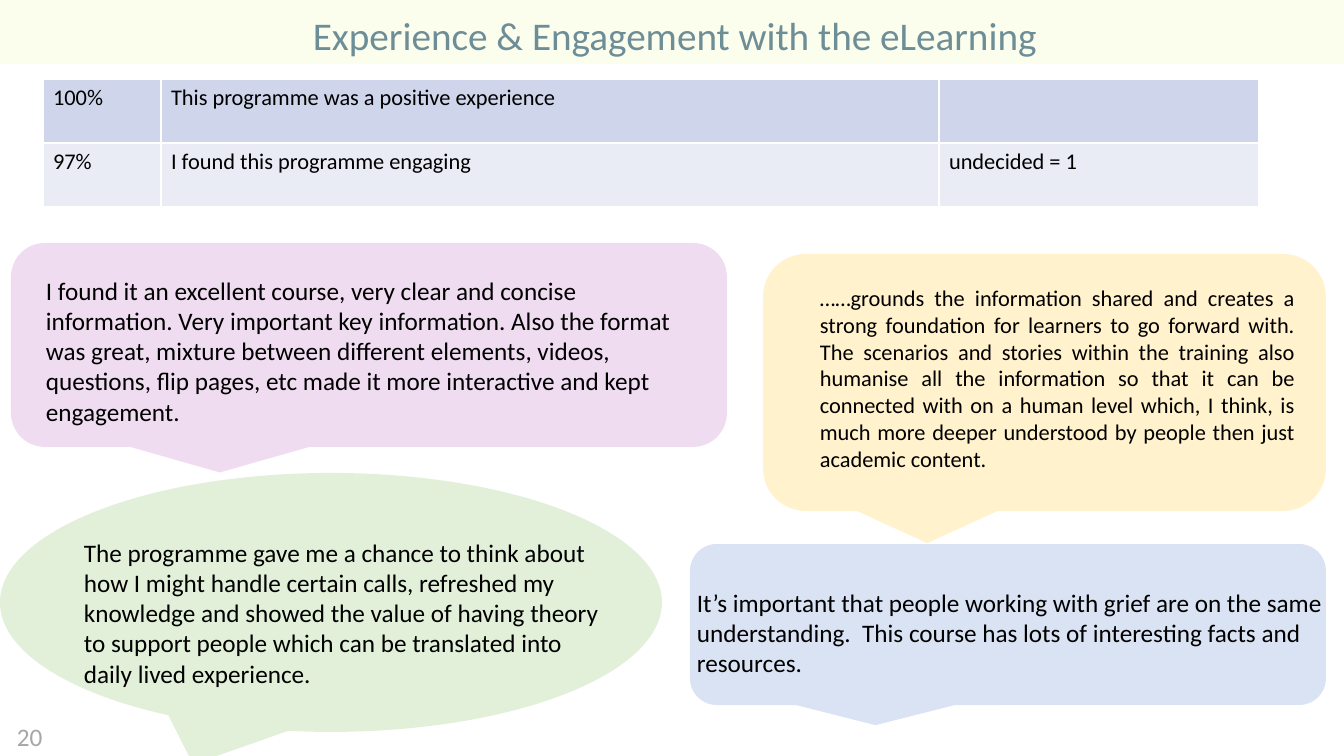
import pptx
import pptx.dml.color
import pptx.enum.shapes
import pptx.enum.text
import pptx.oxml
import pptx.oxml.ns
import pptx.util

SHAPE = pptx.enum.shapes.MSO_SHAPE
ALIGN = pptx.enum.text.PP_ALIGN
PX_PER_INCH = 100.8


def px(n):
    return pptx.util.Emu(round(n * 914400 / PX_PER_INCH))


def rgb(value):
    return pptx.dml.color.RGBColor.from_string(value)


class Deck:
    """Holds the text style and the current slide."""

    font = "Calibri"
    ink = "000000"

    def __init__(self, width, height):
        self.prs = pptx.Presentation()
        self.prs.slide_width, self.prs.slide_height = px(width), px(height)
        self.s = self.prs.slides.add_slide(self.prs.slide_layouts[6])

    def style(self, p, size, color=None):
        p.font.name = self.font
        p.font.size = pptx.util.Pt(size)
        p.font.color.rgb = rgb(color or self.ink)

    def shape(self, kind, box, fill, opacity=100):
        sp = self.s.shapes.add_shape(kind, *map(px, box))
        sp.shadow.inherit = False
        sp.line.fill.background()
        sp.fill.solid()
        sp.fill.fore_color.rgb = rgb(fill)
        if opacity < 100:
            clr = sp.fill._xPr.find(".//" + pptx.oxml.ns.qn("a:srgbClr"))
            alpha = clr.makeelement(pptx.oxml.ns.qn("a:alpha"), {"val": str(opacity * 1000)})
            clr.append(alpha)

    def text(self, box, text, size=18, color=None, align=ALIGN.LEFT):
        tf = self.s.shapes.add_textbox(*map(px, box)).text_frame
        tf.word_wrap = True
        tf.auto_size = pptx.enum.text.MSO_AUTO_SIZE.SHAPE_TO_FIT_TEXT
        p = tf.paragraphs[0]
        p.text = text
        p.alignment = align
        self.style(p, size, color)

    def table(self, left, top, widths, row_height, rows, fills, size=16):
        frame = self.s.shapes.add_table(
            len(rows), len(widths), px(left), px(top),
            px(sum(widths)), px(row_height * len(rows)))
        table = frame.table
        table.first_row = table.horz_banding = False
        for column, width in zip(table.columns, widths):
            column.width = px(width)
        for i, (row, fill) in enumerate(zip(rows, fills)):
            table.rows[i].height = px(row_height)
            for j, value in enumerate(row):
                cell = table.cell(i, j)
                cell.text = value
                self.style(cell.text_frame.paragraphs[0], size)
                self.borders(cell, "FFFFFF")
                cell.fill.solid()
                cell.fill.fore_color.rgb = rgb(fill)

    def borders(self, cell, color):
        """Adds 1 pt lines on all sides; call before the cell's fill is set."""
        tcPr = cell._tc.get_or_add_tcPr()
        for side in "LRTB":
            tcPr.append(pptx.oxml.parse_xml(
                f'<a:ln{side} {pptx.oxml.ns.nsdecls("a")} w="12700"><a:solidFill>'
                f'<a:srgbClr val="{color}"/></a:solidFill></a:ln{side}>'))


def main():
    deck = Deck(1344, 756)

    rounded = SHAPE.ROUNDED_RECTANGULAR_CALLOUT
    for kind, box, fill in [
        (rounded, (11, 243, 716, 204), "F0DCF0"),
        (rounded, (690, 544, 636, 161), "DAE3F3"),
        (rounded, (763, 254, 563, 257), "FFF2CC"),
        (SHAPE.OVAL_CALLOUT, (0, 473, 662, 259), "E2F0D9"),
    ]:
        deck.shape(kind, box, fill)

    deck.table(43, 79, (118, 778, 320), 64, [
        ("100%", "This programme was a positive experience", ""),
        ("97%", "I found this programme engaging", "undecided = 1"),
    ], ("CFD5EA", "E9EBF5"))

    deck.text((36, 270, 672, 163),
              "I found it an excellent course, very clear and concise information. "
              "Very important key information. Also the format was great, mixture "
              "between different elements, videos, questions, flip pages, etc made "
              "it more interactive and kept engagement.")
    deck.text((687, 582, 672, 102),
              "It’s important that people working with grief are on the same "
              "understanding.  This course has lots of interesting facts and resources.")
    deck.text((810, 279, 495, 201),
              "……grounds the information shared and creates a strong foundation for "
              "learners to go forward with. The scenarios and stories within the "
              "training also humanise all the information so that it can be connected "
              "with on a human level which, I think, is much more deeper understood by "
              "people then just academic content.", size=16, align=ALIGN.JUSTIFY)
    deck.text((74, 532, 539, 163),
              "The programme gave me a chance to think about how I might handle "
              "certain calls, refreshed my knowledge and showed the value of having "
              "theory to support people which can be translated into daily lived "
              "experience.")
    deck.text((7, 716, 54, 40), "20", color="A6A6A6")

    deck.text((303, 6, 891, 57), "Experience & Engagement with the eLearning",
              size=28, color="1F4E79")
    # The translucent band lies over the title and softens its colour.
    deck.shape(SHAPE.RECTANGLE, (-6, 0, 1366, 64), "F9FECE", opacity=36)

    deck.prs.save("out.pptx")


if __name__ == "__main__":
    main()
